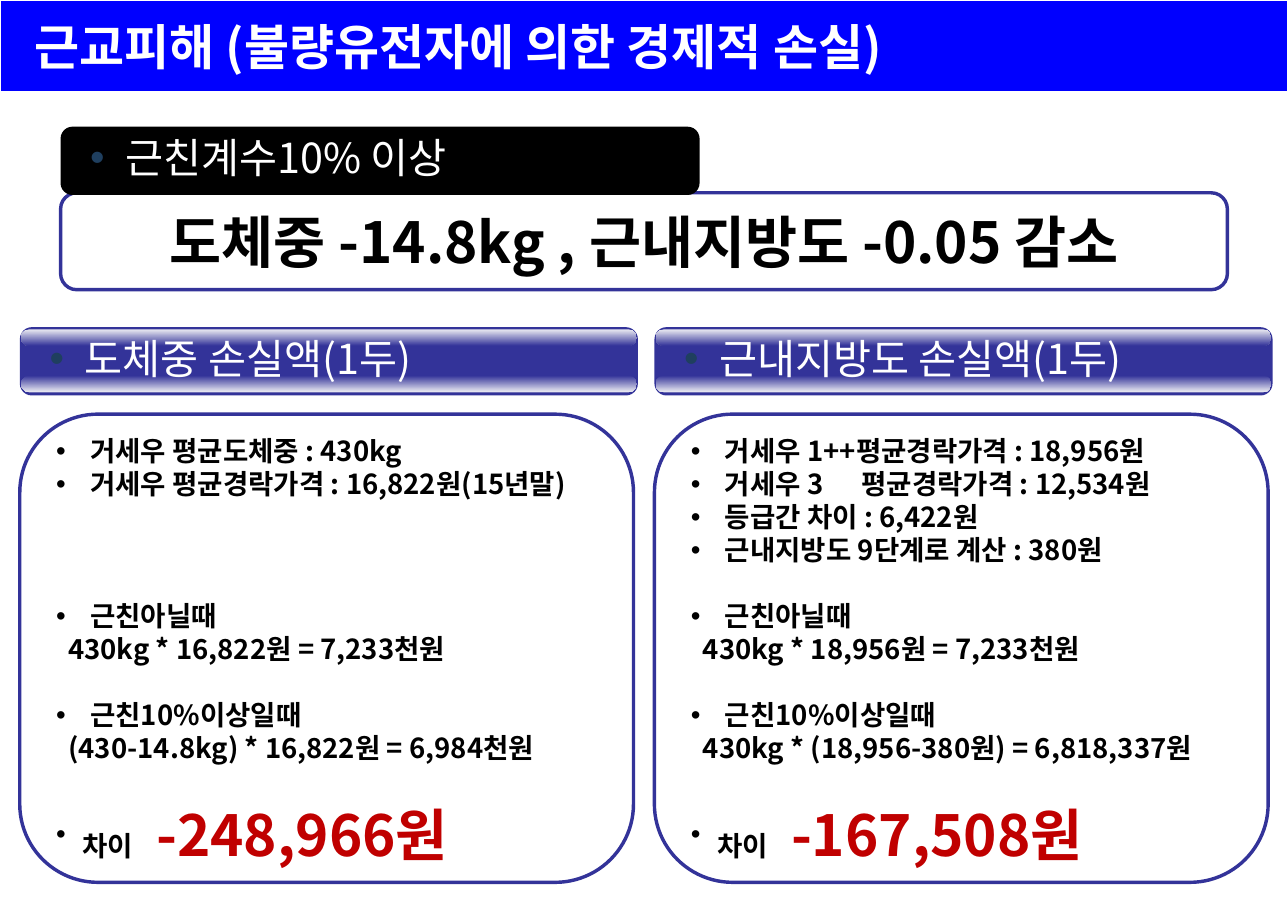
from lxml.etree import SubElement
from pptx import Presentation
from pptx.dml.color import RGBColor
from pptx.enum.shapes import MSO_SHAPE as Shape
from pptx.enum.text import MSO_ANCHOR as Anchor, MSO_AUTO_SIZE as AutoSize, PP_ALIGN as Align
from pptx.oxml import parse_xml
from pptx.oxml.ns import nsdecls, qn
from pptx.util import Inches, Pt

FONT = "Noto Sans CJK KR"
BLACK, WHITE, BLUE = "000000", "FFFFFF", "0000FF"
INDIGO, PALE, RED, BULLET = "333399", "EBEBF2", "C00000", "1F3F5F"
LINE = 21.6  # pitch of the list lines in points
TEXT_SHADOW = (
    f'<a:effectLst {nsdecls("a")}><a:outerShdw dist="17780" dir="2700000">'
    '<a:srgbClr val="000000"/></a:outerShdw></a:effectLst>'
)


def color(hex_string):
    return RGBColor.from_string(hex_string)


def add_text(paragraph, text, size=18, fill=BLACK, bold=False, shadow=False):
    run = paragraph.add_run()
    run.text = text
    run.font.size, run.font.bold, run.font.name = Pt(size), bold, FONT
    run.font.color.rgb = color(fill)
    properties = run.font._element
    latin = properties.find(qn("a:latin"))
    latin.addnext(parse_xml(f'<a:ea {nsdecls("a")} typeface="{FONT}"/>'))
    if shadow:
        latin.addprevious(parse_xml(TEXT_SHADOW))


def format_paragraph(paragraph, bullet=None, indent=0.0, before=0.0, pitch=None, tab=None):
    """Set spacing, a hanging bullet of the given colour and a tab stop."""
    paragraph.space_before = Pt(before)
    if pitch:
        paragraph.line_spacing = Pt(pitch)
    properties = paragraph._p.get_or_add_pPr()
    properties.set("marL", str(Inches(indent)))
    properties.set("indent", str(-Inches(indent) if bullet else 0))
    if bullet:
        SubElement(SubElement(properties, qn("a:buClr")), qn("a:srgbClr"), val=bullet)
        SubElement(properties, qn("a:buFont"), typeface="Arial")
        SubElement(properties, qn("a:buChar"), char="•")
    else:
        SubElement(properties, qn("a:buNone"))
    if tab:
        stops = SubElement(properties, qn("a:tabLst"))
        SubElement(stops, qn("a:tab"), pos=str(Inches(tab)), algn="l")


class SlideBuilder:
    def __init__(self, slide):
        self.slide = slide

    def box(self, left, top, width, height, fill, radius, line=None):
        shape = self.slide.shapes.add_shape(
            Shape.ROUNDED_RECTANGLE, Inches(left), Inches(top), Inches(width), Inches(height))
        shape.shadow.inherit = False
        shape.adjustments[0] = radius
        shape.fill.solid()
        shape.fill.fore_color.rgb = color(fill)
        if line:
            shape.line.color.rgb = color(line)
            shape.line.width = Pt(2.25)
        else:
            shape.line.fill.background()
        return shape

    def frame(self, shape, anchor=Anchor.MIDDLE, inset=0.0):
        frame = shape.text_frame
        frame.word_wrap, frame.auto_size = True, AutoSize.NONE
        frame.vertical_anchor = anchor
        frame.margin_left = frame.margin_right = Inches(inset)
        frame.margin_top = frame.margin_bottom = 0
        return frame

    def placeholder(self, index, left, top, width, height):
        """Move a placeholder into position, in front of what is drawn so far."""
        shape = self.slide.placeholders[index]
        shape.left, shape.top = Inches(left), Inches(top)
        shape.width, shape.height = Inches(width), Inches(height)
        shape.element.getparent().append(shape.element)
        return shape

    def title(self, text, width, height):
        band = self.slide.shapes.add_table(1, 1, 0, 0, Inches(width), Inches(height))
        cell = band.table.cell(0, 0)
        cell.fill.solid()
        cell.fill.fore_color.rgb = color(BLUE)
        frame = self.frame(self.placeholder(0, 0, 0.15, 11.64, 0.54), inset=0.31)
        paragraph = frame.paragraphs[0]
        paragraph.alignment = Align.LEFT
        add_text(paragraph, text, size=32, fill=WHITE, bold=True)

    def plate(self, left, top, width, fill, edge):
        """Draw a header plate whose upper and lower edges fade to a colour."""
        self.box(left, top, width, 0.62, fill, 0.175)
        for offset, stops in ((0.44, (fill, edge)), (0.02, (edge, fill))):
            strip = self.box(left + 0.01, top + offset, width - 0.02, 0.15, fill, 0.5)
            strip.fill.gradient()
            strip.fill.gradient_angle = 270
            for stop, (position, stop_color) in zip(strip.fill.gradient_stops, enumerate(stops)):
                stop.position = position
                stop.color.rgb = color(stop_color)

    def heading(self, shape, text, shadow=False):
        paragraph = self.frame(shape, inset=0.1).paragraphs[0]
        format_paragraph(paragraph, bullet=BULLET, indent=0.32)
        add_text(paragraph, text, size=27, fill=WHITE, shadow=shadow)

    def loss_list(self, shape, rows, loss):
        """Fill a list with rows of text, bullet flag and blank lines before."""
        frame = self.frame(shape, Anchor.TOP)
        for number, (text, bulleted, gap) in enumerate(rows):
            paragraph = frame.add_paragraph() if number else frame.paragraphs[0]
            format_paragraph(
                paragraph, bullet=BLACK if bulleted else None, indent=0.31 if bulleted else 0.11,
                before=gap * LINE, pitch=LINE, tab=1.55 if "\t" in text else None)
            add_text(paragraph, text, bold=True)
        paragraph = frame.add_paragraph()
        format_paragraph(paragraph, bullet=BLACK, indent=0.24, before=23.5, pitch=44, tab=0.91)
        add_text(paragraph, "차이\t", bold=True)
        add_text(paragraph, loss, size=37, fill=RED, bold=True)


COLUMNS = [
    ("도체중 손실액(1두)", [
        ("거세우 평균도체중 : 430kg", True, 0),
        ("거세우 평균경락가격 : 16,822원(15년말)", True, 0),
        ("근친아닐때", True, 3),
        ("430kg * 16,822원 = 7,233천원", False, 0),
        ("근친10%이상일때", True, 1),
        ("(430-14.8kg) * 16,822원 = 6,984천원", False, 0),
    ], "-248,966원"),
    ("근내지방도 손실액(1두)", [
        ("거세우 1++평균경락가격 : 18,956원", True, 0),
        ("거세우 3\t평균경락가격 : 12,534원", True, 0),
        ("등급간 차이 : 6,422원", True, 0),
        ("근내지방도 9단계로 계산 : 380원", True, 0),
        ("근친아닐때", True, 1),
        ("430kg * 18,956원 = 7,233천원", False, 0),
        ("근친10%이상일때", True, 1),
        ("430kg * (18,956-380원) = 6,818,337원", False, 0),
    ], "-167,508원"),
]


def main():
    presentation = Presentation()
    presentation.slide_width, presentation.slide_height = Inches(11.69), Inches(8.27)
    comparison = presentation.slide_layouts[4]
    builder = SlideBuilder(presentation.slides.add_slide(comparison))

    # Title band
    builder.title("근교피해 (불량유전자에 의한 경제적 손실)", 11.69, 0.83)

    # Summary
    summary = builder.box(0.55, 1.75, 10.59, 0.88, WHITE, 0.167, INDIGO)
    paragraph = builder.frame(summary).paragraphs[0]
    paragraph.alignment = Align.CENTER
    add_text(paragraph, "도체중 -14.8kg , 근내지방도 -0.05 감소", size=37, bold=True)
    builder.plate(0.55, 1.15, 5.8, BLACK, BLACK)
    label = builder.slide.shapes.add_textbox(Inches(0.72), Inches(1.15), Inches(5.53), Inches(0.56))
    builder.heading(label, "근친계수10% 이상")

    # Loss columns
    for number, (heading, rows, loss) in enumerate(COLUMNS):
        left = 0.18 + 5.76 * number
        builder.box(left, 3.76, 5.57, 4.25, WHITE, 0.167, INDIGO)
        builder.plate(left, 2.97, 5.61, INDIGO, PALE)
        header = builder.placeholder(1 + 2 * number, left + 0.17, 2.97, 5.31, 0.56)
        builder.heading(header, heading, shadow=True)
        body = builder.placeholder(2 + 2 * number, left + 0.33, 3.94, 5.1, 3.95)
        builder.loss_list(body, rows, loss)

    presentation.save("out.pptx")


if __name__ == "__main__":
    main()
